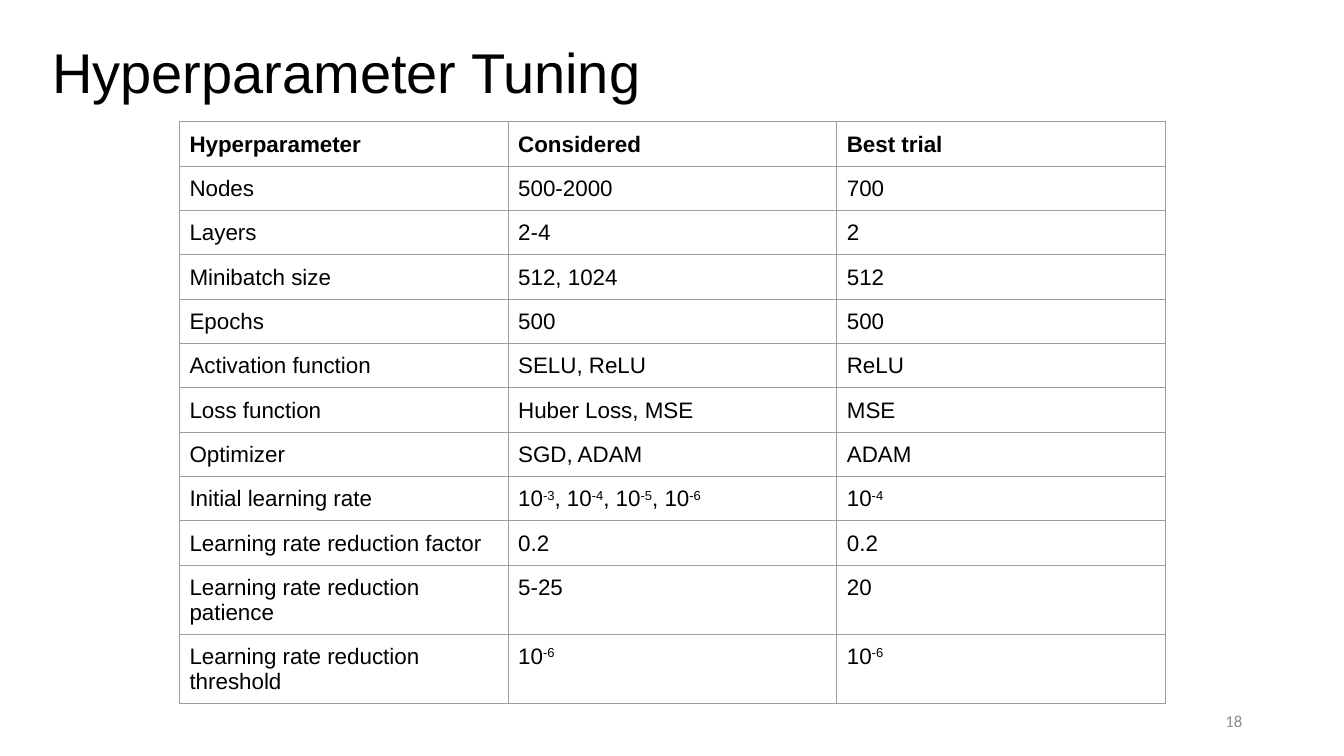
from pptx import Presentation
from pptx.dml.color import RGBColor
from pptx.enum.text import MSO_ANCHOR as Anchor, PP_ALIGN as Align
from pptx.oxml import parse_xml
from pptx.oxml.ns import nsdecls
from pptx.util import Inches, Pt

BLACK = RGBColor(0x00, 0x00, 0x00)
GRAY = RGBColor(0x8C, 0x8C, 0x8C)
RULE = RGBColor(0x9E, 0x9E, 0x9E)

# Text between a pair of ^ marks is superscript.
ROWS = [
    ("Hyperparameter", "Considered", "Best trial"),
    ("Nodes", "500-2000", "700"),
    ("Layers", "2-4", "2"),
    ("Minibatch size", "512, 1024", "512"),
    ("Epochs", "500", "500"),
    ("Activation function", "SELU, ReLU", "ReLU"),
    ("Loss function", "Huber Loss, MSE", "MSE"),
    ("Optimizer", "SGD, ADAM", "ADAM"),
    ("Initial learning rate", "10^-3^, 10^-4^, 10^-5^, 10^-6^", "10^-4^"),
    ("Learning rate reduction factor", "0.2", "0.2"),
    ("Learning rate reduction patience", "5-25", "20"),
    ("Learning rate reduction threshold", "10^-6^", "10^-6^"),
]
TALL = 10  # first row whose label takes two lines


def write(para, text, size, face="Arial", color=BLACK, bold=False):
    """Add runs to para, raising the text between ^ marks."""
    for i, part in enumerate(text.split("^")):
        if not part:
            continue
        run = para.add_run()
        run.text = part
        font = run.font
        font.size, font.name, font.bold = Pt(size), face, bold
        font.color.rgb = color
        if i % 2:
            font._element.set("baseline", "30000")


def add_box(left, top, width, height):
    frame = slide.shapes.add_textbox(
        Inches(left), Inches(top), Inches(width), Inches(height)).text_frame
    frame.word_wrap = True
    frame.vertical_anchor = Anchor.MIDDLE
    return frame.paragraphs[0]


prs = Presentation()
prs.slide_width, prs.slide_height = Inches(13.33), Inches(7.5)
slide = prs.slides.add_slide(prs.slide_layouts[6])

title = add_box(0.42, 0.41, 11.5, 0.67)
title.line_spacing = 0.9
write(title, "Hyperparameter Tuning", 40)

table = slide.shapes.add_table(
    len(ROWS), 3, Inches(1.78), Inches(1.21), Inches(9.78), Inches(5.66)).table
table.first_row = table.horz_banding = False
for col in table.columns:
    col.width = Inches(3.26)

for r, texts in enumerate(ROWS):
    table.rows[r].height = Inches(0.63 if r >= TALL else 0.44)
    for c, text in enumerate(texts):
        cell = table.cell(r, c)
        cell.margin_left = cell.margin_right = cell.margin_top = Inches(0.1)
        cell.margin_bottom = Inches(0.05)
        write(cell.text_frame.paragraphs[0], text, 16, bold=r == 0)
        props = cell._tc.get_or_add_tcPr()
        for side in "LRTB":
            props.append(parse_xml(
                f'<a:ln{side} {nsdecls("a")} w="{Pt(0.75)}"><a:solidFill>'
                f'<a:srgbClr val="{RULE}"/></a:solidFill></a:ln{side}>'))
        cell.fill.background()

page = add_box(9.42, 6.95, 3, 0.4)
page.alignment = Align.RIGHT
write(page, "18", 12, "Calibri", GRAY)

prs.save("out.pptx")
